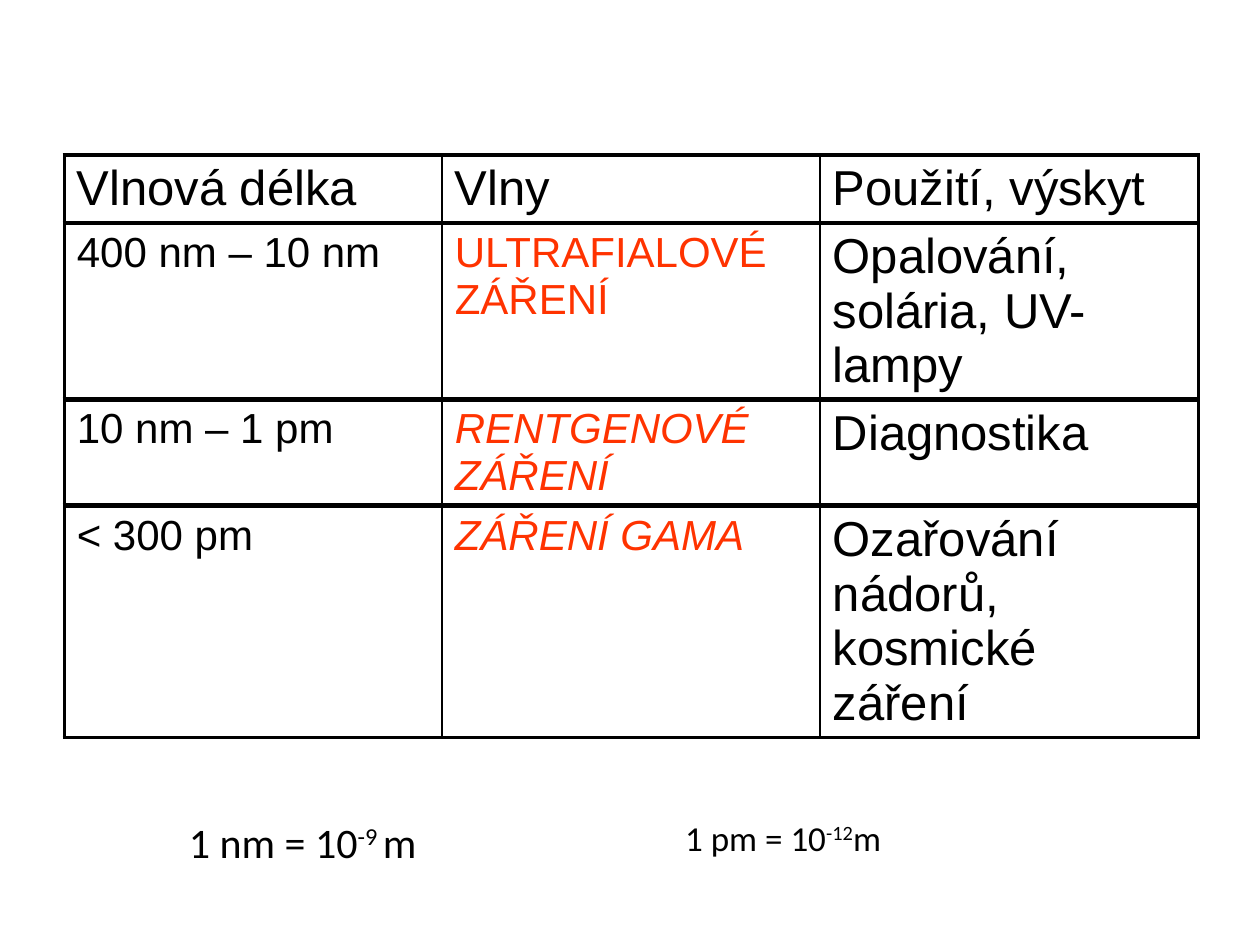
import pptx
import pptx.dml.color
import pptx.oxml
import pptx.oxml.ns
import pptx.util

WIDTH, HEIGHT = 10, 7.5
BLACK, RED = "000000", "FF3300"
THIN, OUTER, THICK = 0.95, 2.21, 3
ROW_HEIGHTS = [0.54, 1.4, 0.84, 1.84]
ROWS = [
    ["Vlnová délka", "Vlny", "Použití, výskyt"],
    ["400 nm – 10 nm", "ULTRAFIALOVÉ ZÁŘENÍ", "Opalování, solária, UV-lampy"],
    ["10 nm – 1 pm", "RENTGENOVÉ ZÁŘENÍ", "Diagnostika"],
    ["< 300 pm", "ZÁŘENÍ GAMA", "Ozařování nádorů, kosmické záření"],
]


def color(value):
    """Return the colour for a hex string."""
    return pptx.dml.color.RGBColor.from_string(value)


def add_run(paragraph, text, size, font, fill=BLACK, italic=False, baseline=0):
    """Append one formatted run to a paragraph."""
    run = paragraph.add_run()
    run.text = text
    run.font.size = pptx.util.Pt(size)
    run.font.name = font
    run.font.italic = italic
    run.font.color.rgb = color(fill)
    if baseline:
        run._r.get_or_add_rPr().set("baseline", str(baseline * 1000))


def add_borders(cell, widths):
    """Draw black cell borders from widths keyed by side letter."""
    properties = cell._tc.get_or_add_tcPr()
    for side in "LRTB":
        properties.append(pptx.oxml.parse_xml(
            f'<a:ln{side} {pptx.oxml.ns.nsdecls("a")} w="{pptx.util.Pt(widths[side])}">'
            f'<a:solidFill><a:srgbClr val="{BLACK}"/></a:solidFill></a:ln{side}>'))


def add_wave_table(slide, left, top, width):
    """Place the table of wavelengths, waves and uses."""
    last_row, last_column = len(ROWS) - 1, len(ROWS[0]) - 1
    box = [pptx.util.Inches(value) for value in (left, top, width, sum(ROW_HEIGHTS))]
    table = slide.shapes.add_table(last_row + 1, last_column + 1, *box).table
    table.first_row = table.horz_banding = False
    for column in table.columns:
        column.width = pptx.util.Inches(width / (last_column + 1))
    for i, texts in enumerate(ROWS):
        table.rows[i].height = pptx.util.Inches(ROW_HEIGHTS[i])
        for j, text in enumerate(texts):
            cell = table.cell(i, j)
            add_borders(cell, {
                "L": OUTER if j == 0 else THIN,
                "R": OUTER if j == last_column else THIN,
                "T": OUTER if i == 0 else THICK,
                "B": OUTER if i == last_row else THICK,
            })
            cell.fill.background()
            size = 28 if i == 0 or j == last_column else 24
            is_wave = i > 0 and j == 1
            paragraph = cell.text_frame.paragraphs[0]
            paragraph.space_before = pptx.util.Pt(size * 0.2)
            add_run(paragraph, text, size, "Arial", RED if is_wave else BLACK, is_wave and i > 1)


def add_unit_note(slide, left, top, width, height, size, unit, exponent):
    """Place one conversion of a unit to metres on a single line."""
    box = [pptx.util.Inches(value) for value in (left, top, width, height)]
    text_frame = slide.shapes.add_textbox(*box).text_frame
    text_frame.word_wrap = True
    paragraph = text_frame.paragraphs[0]
    add_run(paragraph, f"1 {unit} = 10", size, "Calibri")
    add_run(paragraph, exponent, size, "Calibri", baseline=30)
    add_run(paragraph, "m", size, "Calibri")


def main():
    """Build and save the slide."""
    presentation = pptx.Presentation()
    presentation.slide_width = pptx.util.Inches(WIDTH)
    presentation.slide_height = pptx.util.Inches(HEIGHT)
    slide = presentation.slides.add_slide(presentation.slide_layouts[6])
    add_wave_table(slide, 0.51, 1.23, 0.9 * WIDTH)
    note_top = 6.43
    add_unit_note(slide, 1.4, note_top, 2.15, 0.85, 24, "nm", "-9 ")
    add_unit_note(slide, 5.34, note_top, 1.9, 0.43, 20, "pm", "-12")
    presentation.save("out.pptx")


if __name__ == "__main__":
    main()
